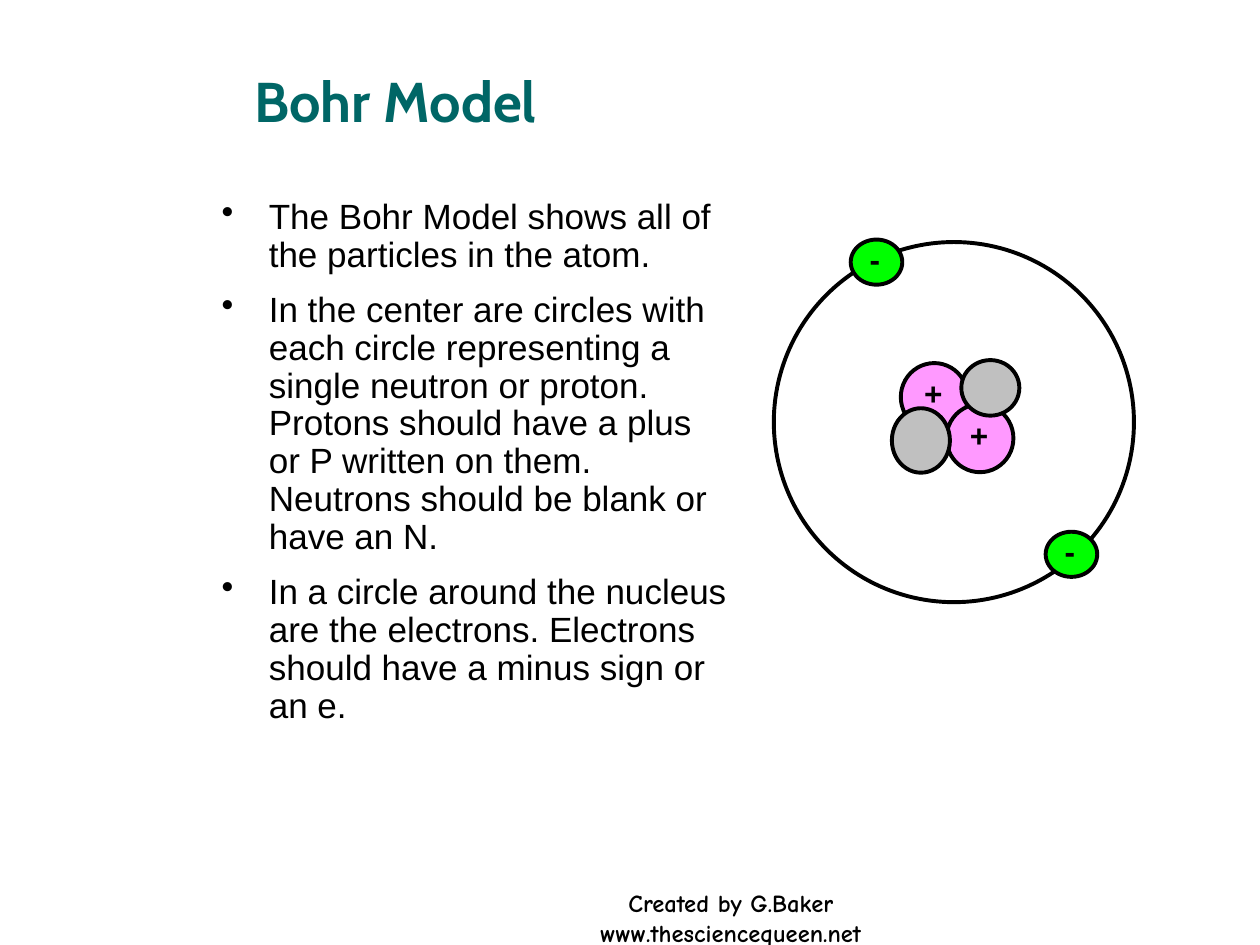
from lxml import etree
from pptx import Presentation
from pptx import util as u
from pptx.dml.color import RGBColor
from pptx.enum import shapes, text
from pptx.oxml.ns import qn

COLORS = {
    "ink": "000000",
    "title": "006666",
    "proton": "FF99FF",
    "neutron": "C0C0C0",
    "electron": "00FF00",
}

deck = Presentation()
deck.slide_width, deck.slide_height = u.Cm(25.4), u.Cm(19.05)
page = deck.slides.add_slide(deck.slide_layouts[6])


def add_text(area, lines, font, size, color="ink", bold=False, bullet=False):
    box = page.shapes.add_textbox(*[u.Cm(length) for length in area])
    frame = box.text_frame
    frame.text = "\n".join(lines)
    frame.word_wrap = True
    for para in frame.paragraphs:
        if bullet:
            props = para._p.get_or_add_pPr()
            props.set("marL", str(u.Cm(0.95)))
            props.set("indent", str(u.Cm(-0.95)))
            etree.SubElement(props, qn("a:buChar")).set("char", "•")
        for span in para.runs:
            span.font.name = font
            span.font.size = u.Pt(size)
            span.font.bold = bold
            span.font.color.rgb = RGBColor.from_string(COLORS[color])
    return frame


def add_circle(area, color=None):
    circle = page.shapes.add_shape(
        shapes.MSO_SHAPE.OVAL, *[u.Cm(length) for length in area])
    circle.shadow.inherit = False
    circle.line.color.rgb = RGBColor.from_string(COLORS["ink"])
    circle.line.width = u.Pt(2.25)
    if color:
        circle.fill.solid()
        circle.fill.fore_color.rgb = RGBColor.from_string(COLORS[color])
    else:
        circle.fill.background()


credit = add_text((10.11, 17.78, 9.25, 1.27),
                  ["Created by G.Baker www.thesciencequeen.net"],
                  "Comic Neue", 14, bold=True)
credit.paragraphs[0].alignment = text.PP_ALIGN.CENTER

title = add_text((4.88, 0.84, 19.48, 2.34), ["Bohr Model"],
                 "Cabin", 32, "title", bold=True)
title.vertical_anchor = text.MSO_ANCHOR.MIDDLE

body = add_text((4.22, 3.89, 10.74, 14), [
    "The Bohr Model shows all of the particles in the atom.",
    "In the center are circles with each circle representing a single neutron "
    "or proton. Protons should have a plus or P written on them. "
    "Neutrons should be blank or have an N.",
    "In a circle around the nucleus are the electrons. "
    "Electrons should have a minus sign or an e.",
], "Arial", 20, bullet=True)
for index, para in enumerate(body.paragraphs):
    para.line_spacing = 0.9
    para.space_before = u.Pt(10 if index else 0)

for left, top in [(18.16, 7.32), (19.08, 8.15)]:
    add_circle((left, top, 1.35, 1.37), "proton")
    sign = add_text((left + 0.22, top + 0.25, 1.45, 0.86), ["+"],
                    "Arial", 18, bold=True)
    sign.paragraphs[0].line_spacing = 0.8

for area in [(19.38, 7.26, 1.17, 1.12), (17.98, 8.23, 1.17, 1.3)]:
    add_circle(area, "neutron")

add_circle((15.6, 4.88, 7.26, 7.26))

for left, top in [(17.15, 4.83), (21.08, 10.72)]:
    add_circle((left, top, 1.04, 0.91), "electron")
    sign = add_text((left + 0.13, top + 0.03, 0.86, 0.86), ["-"],
                    "Arial", 18, bold=True)
    sign.paragraphs[0].line_spacing = 0.8

deck.save("out.pptx")
